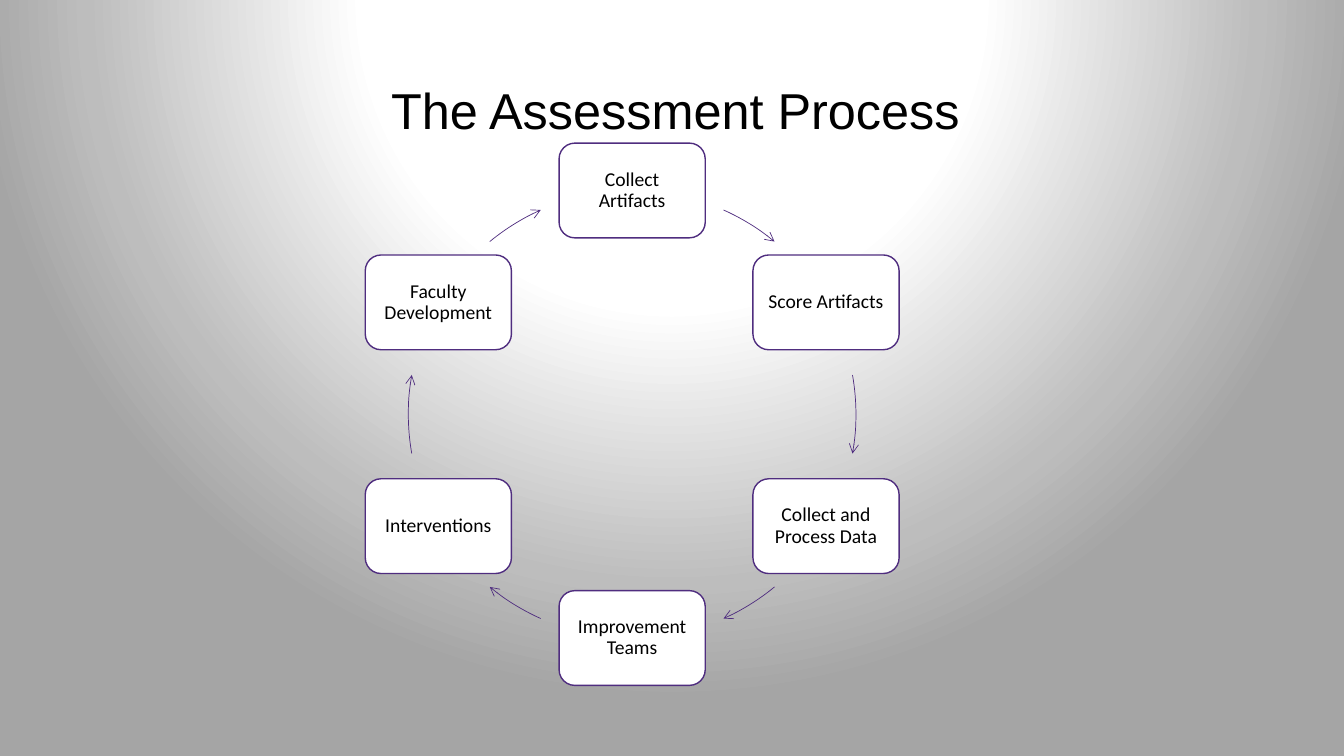
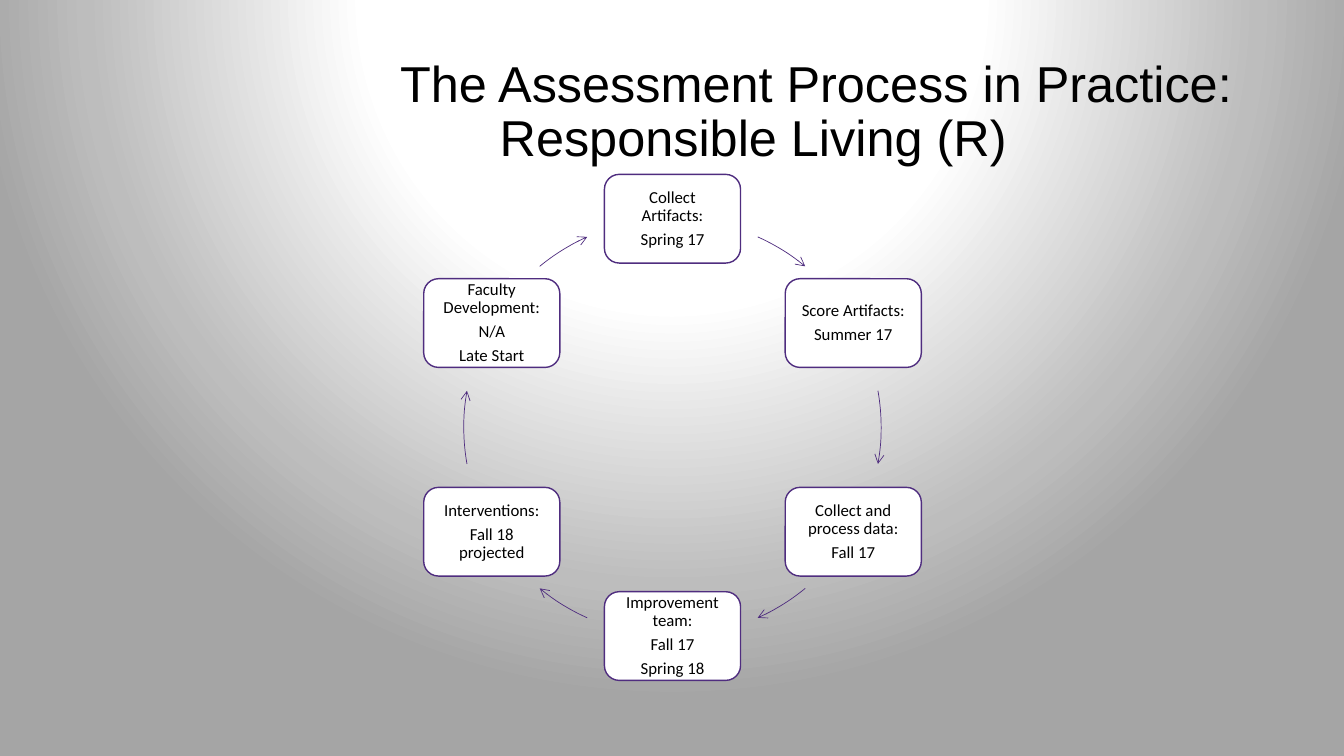
import math

from lxml import etree
from pptx import Presentation
from pptx.dml.color import RGBColor
from pptx.enum.shapes import MSO_SHAPE
from pptx.enum.text import MSO_ANCHOR, PP_ALIGN
from pptx.oxml import parse_xml
from pptx.oxml.ns import nsdecls, qn
from pptx.util import Inches, Pt

ROUNDED, ARC = MSO_SHAPE.ROUNDED_RECTANGLE, MSO_SHAPE.ARC
LEFT, CENTER = PP_ALIGN.LEFT, PP_ALIGN.CENTER
MIDDLE = MSO_ANCHOR.MIDDLE

WHITE, BLACK, PURPLE = "FFFFFF", "000000", "4F2D7F"
BACKGROUND_STOPS = [(0, WHITE), (40, WHITE), (76, "BDBDBD"), (91, "A5A5A5")]
TITLE_INDENT = Inches(1.25)
STEP_ANGLE = 60
# Clockwise degrees from the top of the ring
ARROW_SPANS = [(24.1, 39.5), (79.9, 100.1), (140.5, 155.9),
               (204.1, 219.5), (259.9, 280.1), (320.5, 335.9)]

CYCLES = [
    {
        "title": "The Assessment Process", "align": LEFT,
        "center": (6.27, 4.11), "radius": 2.22, "box": (1.45, 0.94),
        "size": 14, "inset": 0.1,
        "steps": [["Collect Artifacts"], ["Score Artifacts"],
                  ["Collect and Process Data"], ["Improvement Teams"],
                  ["Interventions"], ["Faculty Development"]],
    },
    {
        "title": "The Assessment Process in Practice: Responsible Living (R)",
        "align": CENTER,
        "center": (6.67, 4.24), "radius": 2.07, "box": (1.35, 0.88),
        "size": 12, "inset": 0.09,
        "steps": [["Collect Artifacts:", "Spring 17"],
                  ["Score Artifacts:", "Summer 17"],
                  ["Collect and process data:", "Fall 17"],
                  ["Improvement team:", "Fall 17", "Spring 18"],
                  ["Interventions:", "Fall 18 projected"],
                  ["Faculty Development:", "N/A", "Late Start"]],
    },
]


def color(value):
    return RGBColor.from_string(value)


def write_paragraph(paragraph, text, font_name, size, align):
    paragraph.text = text
    paragraph.alignment = align
    paragraph.line_spacing = 0.9
    paragraph.font.name = font_name
    paragraph.font.size = Pt(size)
    paragraph.font.color.rgb = color(BLACK)


presentation = Presentation()
presentation.slide_width = Inches(13.33)
presentation.slide_height = Inches(7.5)
blank_layout = presentation.slide_layouts[6]

# Shared radial background, centred above the slide
master = presentation.slide_master
master.background.fill.solid()
solid_fill = master.element.find(".//" + qn("p:bgPr")).find(qn("a:solidFill"))
stops = "".join(f'<a:gs pos="{position * 1000}"><a:srgbClr val="{value}"/></a:gs>'
                for position, value in BACKGROUND_STOPS)
solid_fill.getparent().replace(solid_fill, parse_xml(
    f'<a:gradFill {nsdecls("a")} rotWithShape="1"><a:gsLst>{stops}</a:gsLst>'
    '<a:path path="circle">'
    '<a:fillToRect l="50000" t="-80000" r="50000" b="180000"/>'
    '</a:path></a:gradFill>'))

for cycle in CYCLES:
    slide = presentation.slides.add_slide(blank_layout)
    title = slide.shapes.add_textbox(Inches(2.53), Inches(0.4), Inches(9.88), Inches(1.45))
    title.text_frame.word_wrap = True
    title.text_frame.vertical_anchor = MIDDLE
    title_paragraph = title.text_frame.paragraphs[0]
    write_paragraph(title_paragraph, cycle["title"], "Arial", 36, cycle["align"])
    title_paragraph._p.get_or_add_pPr().set("indent", str(TITLE_INDENT))

    center_x, center_y = cycle["center"]
    radius = cycle["radius"]
    width, height = cycle["box"]

    for index, (lines, span) in enumerate(zip(cycle["steps"], ARROW_SPANS)):
        angle = math.radians(index * STEP_ANGLE)
        box = slide.shapes.add_shape(
            ROUNDED,
            Inches(center_x + radius * math.sin(angle) - width / 2),
            Inches(center_y - radius * math.cos(angle) - height / 2),
            Inches(width), Inches(height))
        box.shadow.inherit = False
        box.fill.solid()
        box.fill.fore_color.rgb = color(WHITE)
        box.line.color.rgb = color(PURPLE)
        box.line.width = Pt(1)

        frame = box.text_frame
        frame.word_wrap = True
        frame.vertical_anchor = MIDDLE
        frame.margin_left = frame.margin_right = Inches(cycle["inset"])
        frame.margin_top = frame.margin_bottom = Inches(cycle["inset"])
        for line_number, line in enumerate(lines):
            paragraph = frame.add_paragraph() if line_number else frame.paragraphs[0]
            write_paragraph(paragraph, line, "Calibri", cycle["size"], CENTER)
            paragraph.space_after = Pt(0.35 * cycle["size"])

        arrow = slide.shapes.add_shape(
            ARC, Inches(center_x - radius), Inches(center_y - radius),
            Inches(2 * radius), Inches(2 * radius))
        arrow.shadow.inherit = False
        arrow.fill.background()
        arrow.line.color.rgb = color(PURPLE)
        arrow.line.width = Pt(0.5)
        for end, degrees in enumerate(span):
            # Arc angles start at three o'clock, in 60000ths of a degree
            arrow.adjustments[end] = (degrees - 90) % 360 * 0.6
        etree.SubElement(arrow.line._get_or_add_ln(), qn("a:tailEnd"), type="arrow")

presentation.save("out.pptx")
